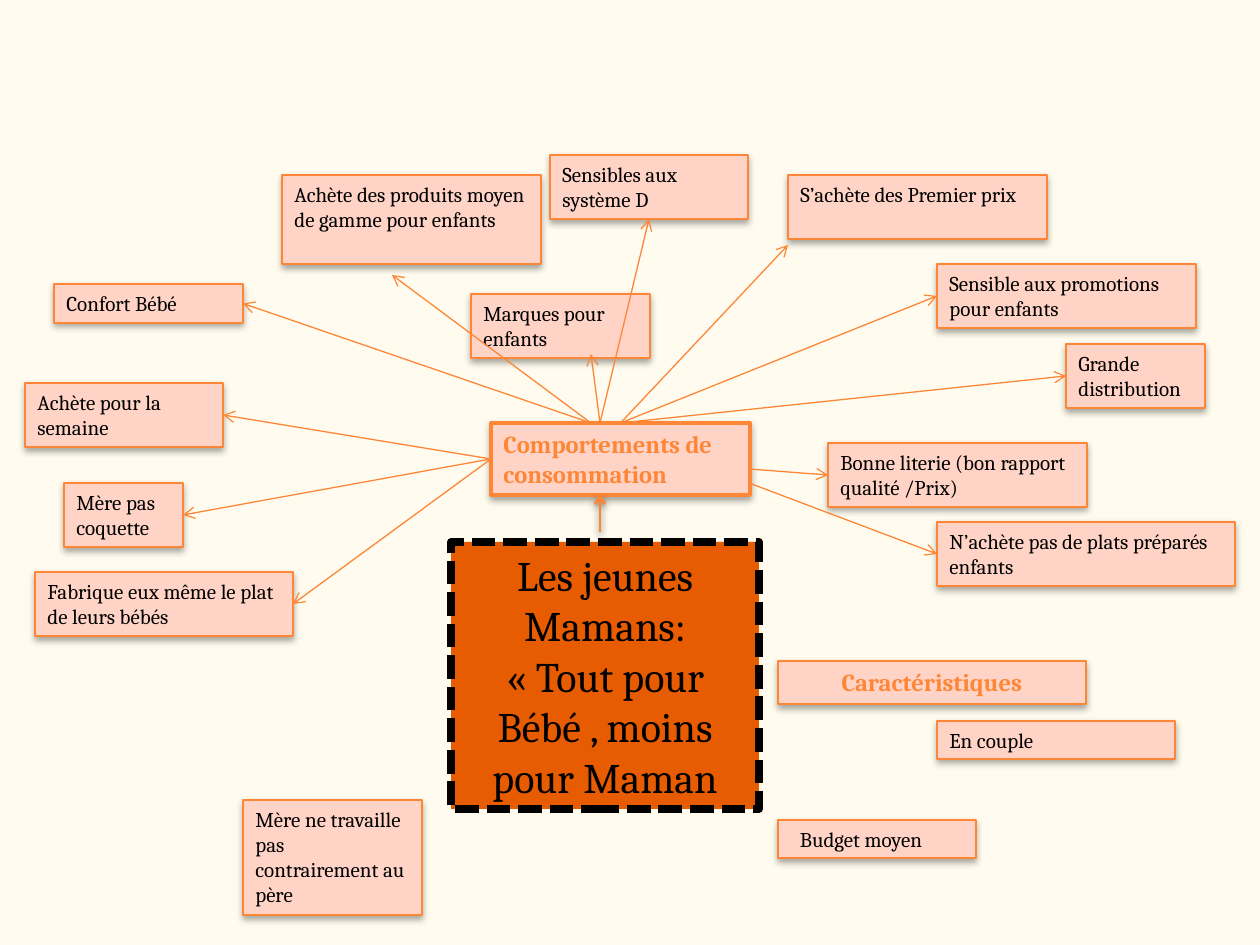
from lxml import etree
from pptx import Presentation
from pptx.dml.color import RGBColor
from pptx.enum.dml import MSO_LINE
from pptx.enum.shapes import MSO_CONNECTOR, MSO_SHAPE
from pptx.enum.text import MSO_ANCHOR, PP_ALIGN
from pptx.oxml import parse_xml
from pptx.oxml.ns import nsdecls, qn
from pptx.util import Pt

PX = 914400 / 126
RECTANGLE, STRAIGHT = MSO_SHAPE.RECTANGLE, MSO_CONNECTOR.STRAIGHT
CENTER, LEFT = PP_ALIGN.CENTER, PP_ALIGN.LEFT
TOP, MIDDLE = MSO_ANCHOR.TOP, MSO_ANCHOR.MIDDLE
TOP_SIDE, LEFT_SIDE, BOTTOM_SIDE, RIGHT_SIDE = range(4)
BLACK, ORANGE, PEACH = "000000", "FE8637", "FFD4C7"


def set_shadow(shape, opacity):
    """Give a soft shadow straight below the shape; opacity 0 means none."""
    properties = shape._element.spPr
    for old in properties.findall(qn("a:effectLst")):
        properties.remove(old)
    effects = etree.SubElement(properties, qn("a:effectLst"))
    if opacity:
        effects.append(parse_xml(
            f'<a:outerShdw {nsdecls("a")} blurRad="50800" dist="25400" dir="5400000" '
            f'rotWithShape="0"><a:srgbClr val="{BLACK}"><a:alpha val="{opacity * 1000}"/>'
            '</a:srgbClr></a:outerShdw>'))


def add_box(frame, lines, size=12, color=BLACK, bold=False, align=LEFT,
            anchor=TOP, fill=PEACH, border=ORANGE, border_width=0.75, shadow=35):
    box = slide.shapes.add_shape(RECTANGLE, *[round(value * PX) for value in frame])
    box.fill.solid()
    box.fill.fore_color.rgb = RGBColor.from_string(fill)
    box.line.color.rgb = RGBColor.from_string(border)
    box.line.width = Pt(border_width)
    set_shadow(box, shadow)
    text = box.text_frame
    text.word_wrap = True
    text.vertical_anchor = anchor
    text.text = lines
    for para in text.paragraphs:
        para.alignment = align
        para.font.name = "Cambria"
        para.font.size = Pt(size)
        para.font.bold = bold
        para.font.color.rgb = RGBColor.from_string(color)
    return box


deck = Presentation()
deck.slide_width = round(1260 * PX)
deck.slide_height = round(945 * PX)
slide = deck.slides.add_slide(deck.slide_layouts[6])
slide.background.fill.solid()
slide.background.fill.fore_color.rgb = RGBColor.from_string("FFFCEF")

persona = add_box((451, 542, 308, 267),
                  "Les jeunes Mamans:\n« Tout pour Bébé , moins pour Maman",
                  size=24, align=CENTER, anchor=MIDDLE, fill="E75C01",
                  border=BLACK, border_width=4.5, shadow=0)
persona.line.dash_style = MSO_LINE.SQUARE_DOT
hub = add_box((491, 423, 259, 72), "Comportements de consommation",
              size=14, color=ORANGE, bold=True, border_width=2.25)

# Behaviours: text, frame, arrow start, arrow end.
# A whole number is a side to join; a pair is a free point.
behaviours = [
    ("Achète des produits moyen de gamme pour enfants", (282, 175, 259, 89),
     (591, 423), (392, 275)),
    ("S’achète des Premier prix", (788, 175, 259, 64), TOP_SIDE, (788, 245)),
    ("Sensible aux promotions pour enfants", (937, 264, 259, 64), TOP_SIDE, LEFT_SIDE),
    ("Confort Bébé", (54, 284, 189, 39), (591, 423), RIGHT_SIDE),
    ("Bonne literie (bon rapport qualité /Prix)", (828, 443, 259, 64),
     (749, 469), LEFT_SIDE),
    ("Grande distribution", (1066, 344, 139, 64), TOP_SIDE, LEFT_SIDE),
    ("N’achète pas de plats préparés enfants", (937, 522, 298, 64),
     (749, 483), LEFT_SIDE),
    ("Fabrique eux même le plat de leurs bébés", (35, 572, 258, 64),
     LEFT_SIDE, RIGHT_SIDE),
    ("Sensibles aux système D", (550, 155, 198, 64), (600, 423), BOTTOM_SIDE),
    ("Achète pour la semaine", (25, 383, 198, 64), LEFT_SIDE, RIGHT_SIDE),
    ("Mère pas coquette", (64, 483, 119, 64), LEFT_SIDE, RIGHT_SIDE),
    ("Marques pour enfants", (471, 294, 179, 64), (600, 423), (591, 354)),
]
arrows = [(persona, (600, 532), hub, (600, 493), 1.57, 45)]
for label, frame, start, end in behaviours:
    arrows.append((hub, start, add_box(frame, label), end, 0.75, 0))

for source, start, target, end, width, shadow in arrows:
    arrow = slide.shapes.add_connector(STRAIGHT, 0, 0, 0, 0)
    if isinstance(start, int):
        arrow.begin_connect(source, start)
    else:
        arrow.begin_x, arrow.begin_y = [round(value * PX) for value in start]
    if isinstance(end, int):
        arrow.end_connect(target, end)
    else:
        arrow.end_x, arrow.end_y = [round(value * PX) for value in end]
    arrow.line.color.rgb = RGBColor.from_string(ORANGE)
    arrow.line.width = Pt(width)
    etree.SubElement(arrow.line._get_or_add_ln(), qn("a:tailEnd"), type="arrow")
    set_shadow(arrow, shadow)

add_box((778, 661, 308, 43), "Caractéristiques",
        size=14, color=ORANGE, bold=True, align=CENTER)
add_box((243, 800, 179, 115), "Mère ne travaille pas contrairement au père")
add_box((937, 721, 238, 38), "En couple")
budget = add_box((778, 820, 198, 38), "Budget moyen")
budget.text_frame.margin_left = round(22 * PX)

deck.save("out.pptx")
